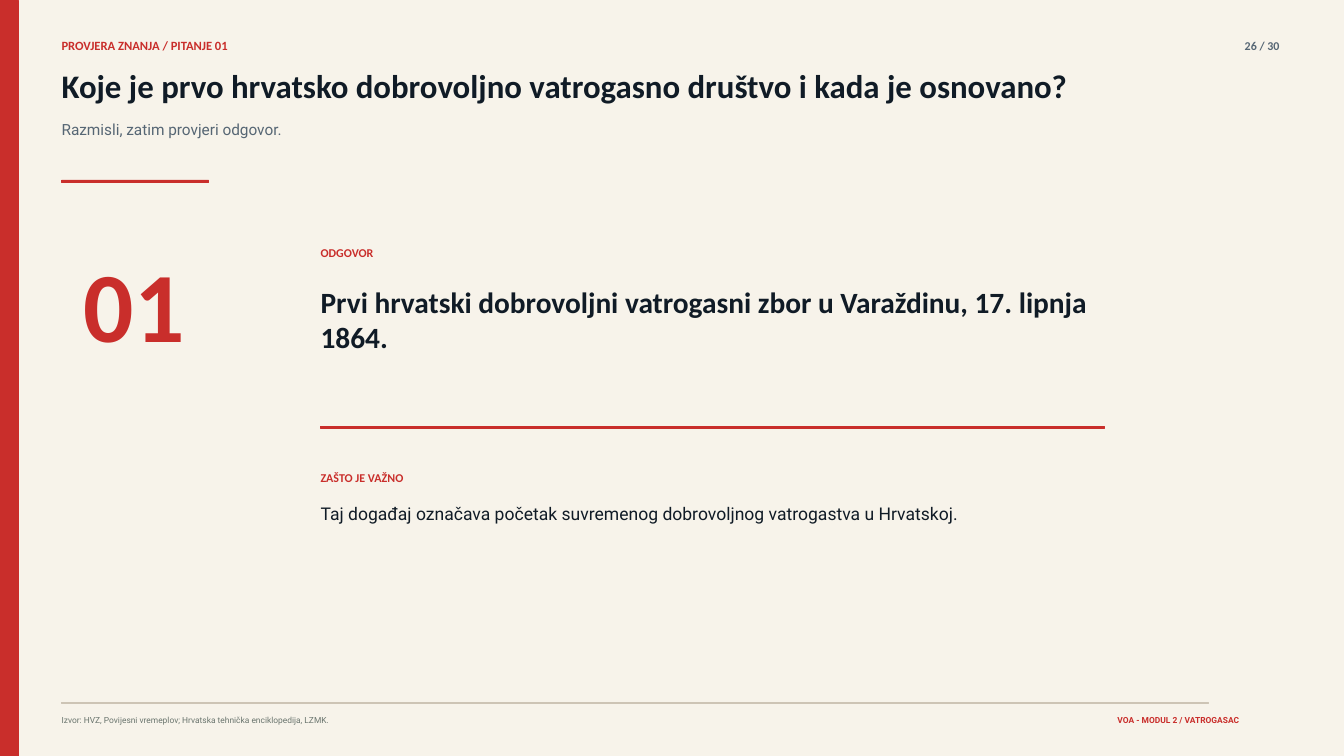
import pptx
import pptx.util
import pptx.dml.color
import pptx.enum.shapes
import pptx.enum.text
from dataclasses import dataclass

Pt = pptx.util.Pt
Align = pptx.enum.text.PP_ALIGN


@dataclass(frozen=True)
class Theme:
    paper: str = "F7F3EA"
    red: str = "C92E2B"
    ink: str = "101B26"
    slate: str = "566674"
    moss: str = "6A756E"
    sand: str = "CDC4B5"
    head: str = "Calibri"
    body: str = "Roboto"
    title: float = 35.2
    answer: float = 31.5
    number: float = 106.5
    reason: float = 18.8
    lead: float = 16.5
    kicker: float = 13.5
    label: float = 12.8
    note: float = 9


@dataclass(frozen=True)
class Box:
    left: float
    top: float
    width: float
    height: float

    def inner(self, x, y, width, height):
        return Box(self.left + x, self.top + y, width, height)

    def points(self):
        return [Pt(v) for v in (self.left, self.top, self.width, self.height)]


theme = Theme()


def color(code):
    return pptx.dml.color.RGBColor.from_string(code)


def write(shape, text, size, tint, font=theme.head, bold=True, align=Align.LEFT):
    frame = shape.text_frame
    frame.word_wrap = True
    frame.auto_size = pptx.enum.text.MSO_AUTO_SIZE.NONE
    frame.vertical_anchor = pptx.enum.text.MSO_ANCHOR.TOP
    frame.margin_left = frame.margin_top = 0
    frame.margin_right = frame.margin_bottom = 0
    frame.text = text
    para = frame.paragraphs[0]
    para.alignment = align
    para.font.name = font
    para.font.size = Pt(size)
    para.font.bold = bold
    para.font.color.rgb = color(tint)


def label(slide, box, *args, **style):
    write(slide.shapes.add_textbox(*box.points()), *args, **style)


def bar(slide, box, tint):
    kind = pptx.enum.shapes.MSO_SHAPE.RECTANGLE
    shape = slide.shapes.add_shape(kind, *box.points())
    shape.shadow.inherit = False
    shape.fill.solid()
    shape.fill.fore_color.rgb = color(tint)
    shape.line.color.rgb = color(tint)
    shape.line.width = Pt(0)


def header(slide, box, kicker, page, title, lead):
    label(slide, box.inner(0, 0, 922, 16.5), kicker, theme.kicker, theme.red)
    label(slide, box.inner(box.width - 112.5, 0.75, 112.5, 15), page,
          theme.label, theme.slate, align=Align.RIGHT)
    place = box.inner(0, 30, box.width, 45)
    shape = slide.shapes.title
    shape.left, shape.top, shape.width, shape.height = place.points()
    write(shape, title, theme.title, theme.ink)
    label(slide, box.inner(0, 87.75, 237, 51), lead, theme.lead, theme.slate,
          font=theme.body, bold=False)
    bar(slide, box.inner(0, box.height - 3, 157.5, 3), theme.red)


def answer(slide, box, number, reply, reason):
    indent = 253.5
    width = box.width - indent
    label(slide, box.inner(0, 0, 157.5, 128), number, theme.number, theme.red)
    label(slide, box.inner(indent, 2.25, 210, 15.75), "ODGOVOR",
          theme.label, theme.red)
    label(slide, box.inner(indent, 43.5, width, 83.5), reply,
          theme.answer, theme.ink)
    bar(slide, box.inner(indent, 196.5, width, 1.5), theme.red)
    label(slide, box.inner(indent, 243.75, 240, 15.75), "ZAŠTO JE VAŽNO",
          theme.label, theme.red)
    label(slide, box.inner(indent, 278.25, width, 29.5), reason,
          theme.reason, theme.ink, font=theme.body, bold=False)


def footer(slide, box, source, course):
    bar(slide, box.inner(0, 0, 1228.5, 0.75), theme.sand)
    label(slide, box.inner(0, 13.5, 1020, 11.5), source, theme.note, theme.moss,
          font=theme.body, bold=False)
    label(slide, box.inner(box.width - 217.5, 13.5, 217.5, 11.5), course,
          theme.note, theme.red, font=theme.body, align=Align.RIGHT)


def main():
    deck = pptx.Presentation()
    deck.slide_width, deck.slide_height = Pt(1440), Pt(810)
    slide = deck.slides.add_slide(deck.slide_layouts[5])
    slide.background.fill.solid()
    slide.background.fill.fore_color.rgb = color(theme.paper)
    bar(slide, Box(0, 0, 19.5, 810), theme.red)
    header(slide, Box(66, 40.5, 1305, 155.25),
           "PROVJERA ZNANJA / PITANJE 01", "26 / 30",
           "Koje je prvo hrvatsko dobrovoljno vatrogasno društvo i kada je osnovano?",
           "Razmisli, zatim provjeri odgovor.")
    answer(slide, Box(90, 260.5, 1093.5, 308), "01",
           "Prvi hrvatski dobrovoljni vatrogasni zbor u Varaždinu, 17. lipnja 1864.",
           "Taj događaj označava početak suvremenog dobrovoljnog vatrogastva u Hrvatskoj.")
    footer(slide, Box(66, 753, 1261.5, 25),
           "Izvor: HVZ, Povijesni vremeplov; Hrvatska tehnička enciklopedija, LZMK.",
           "VOA - MODUL 2 / VATROGASAC")
    deck.save("out.pptx")


if __name__ == "__main__":
    main()
